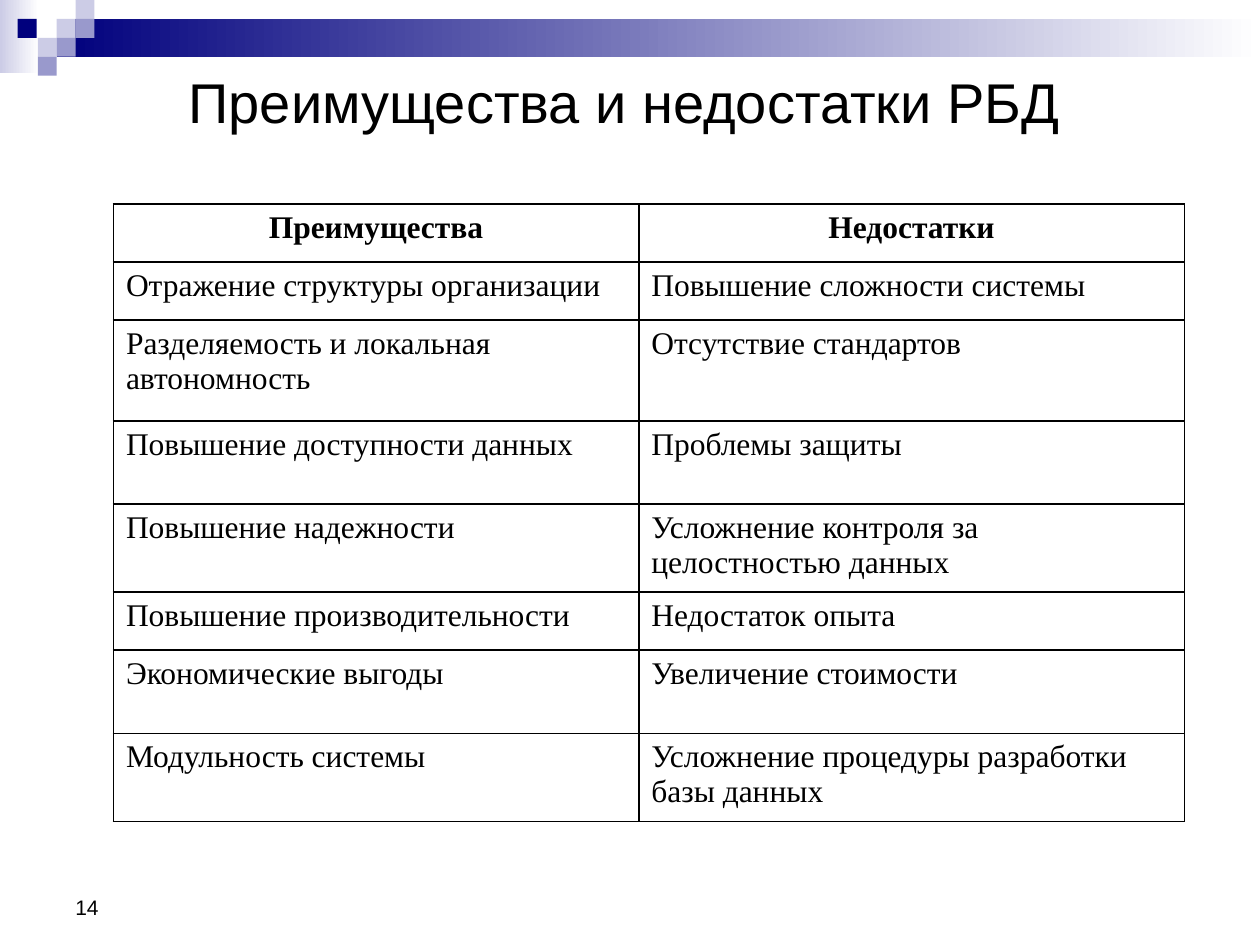
from dataclasses import dataclass

from lxml import etree
from pptx import Presentation
from pptx.dml.color import RGBColor
from pptx.enum import shapes, text
from pptx.oxml import ns
from pptx.util import Inches, Pt


@dataclass(frozen=True)
class Theme:
    navy: str = "00007D"
    mid: str = "9999CC"
    pale: str = "CCCCE6"
    white: str = "FFFFFF"
    ink: str = "000000"
    sans: str = "Arial"
    serif: str = "Times New Roman"
    head: int = 32
    body: int = 18
    foot: int = 12


@dataclass(frozen=True)
class Box:
    x: float
    y: float
    w: float
    h: float

    def place(self) -> tuple:
        return tuple(Inches(v) for v in (self.x, self.y, self.w, self.h))


@dataclass(frozen=True)
class Row:
    height: float
    pro: str
    con: str


LOOK = Theme()
SIDE = 0.15
TILES = [
    (0.45, 0.15, LOOK.pale),
    (0.6, 0, LOOK.pale),
    (0.6, 0.15, LOOK.mid),
    (0.3, 0.3, LOOK.pale),
    (0.14, 0.15, LOOK.navy),
    (0.45, 0.3, LOOK.mid),
    (0.3, 0.45, LOOK.mid),
]
COLS = (4.17, 4.33)
ROWS = [
    Row(0.46, "Преимущества", "Недостатки"),
    Row(0.46, "Отражение структуры организации", "Повышение сложности системы"),
    Row(0.8, "Разделяемость и локальная автономность", "Отсутствие стандартов"),
    Row(0.66, "Повышение доступности данных", "Проблемы защиты"),
    Row(0.7, "Повышение надежности", "Усложнение контроля за целостностью данных"),
    Row(0.46, "Повышение производительности", "Недостаток опыта"),
    Row(0.66, "Экономические выгоды", "Увеличение стоимости"),
    Row(0.7, "Модульность системы", "Усложнение процедуры разработки базы данных"),
]


def add_rect(slide, box: Box, start: str, end: str = "") -> None:
    """Draw a plain rectangle, or a left-to-right gradient if end is given."""
    rect = slide.shapes.add_shape(shapes.MSO_SHAPE.RECTANGLE, *box.place())
    rect.shadow.inherit = False
    rect.line.fill.background()
    if not end:
        rect.fill.solid()
        rect.fill.fore_color.rgb = RGBColor.from_string(start)
        return
    rect.fill.gradient()
    rect.fill.gradient_angle = 0
    for stop, color in zip(rect.fill.gradient_stops, (start, end)):
        stop.color.rgb = RGBColor.from_string(color)


def write(frame, words: str, size: int, face: str,
          center: bool = False, bold: bool = False) -> None:
    par = frame.paragraphs[0]
    par.alignment = text.PP_ALIGN.CENTER if center else text.PP_ALIGN.LEFT
    run = par.add_run()
    run.text = words
    run.font.size = Pt(size)
    run.font.name = face
    run.font.bold = bold
    run.font.color.rgb = RGBColor.from_string(LOOK.ink)


def add_label(slide, box: Box, words: str, size: int,
              anchor: text.MSO_ANCHOR, center: bool = False) -> None:
    frame = slide.shapes.add_textbox(*box.place()).text_frame
    frame.word_wrap = True
    frame.vertical_anchor = anchor
    write(frame, words, size, LOOK.sans, center)


def add_edges(cell) -> None:
    """Put a thin line on all four sides of a cell."""
    props = cell._tc.get_or_add_tcPr()
    for spot, side in enumerate(("a:lnL", "a:lnR", "a:lnT", "a:lnB")):
        line = etree.Element(ns.qn(side), w=str(Pt(1)))
        fill = etree.SubElement(line, ns.qn("a:solidFill"))
        etree.SubElement(fill, ns.qn("a:srgbClr"), val=LOOK.ink)
        props.insert(spot, line)


def add_grid(slide, x: float, y: float) -> None:
    box = Box(x, y, sum(COLS), sum(row.height for row in ROWS))
    grid = slide.shapes.add_table(len(ROWS), len(COLS), *box.place()).table
    grid.first_row = grid.horz_banding = False
    for col, width in zip(grid.columns, COLS):
        col.width = Inches(width)
    for r, row in enumerate(ROWS):
        grid.rows[r].height = Inches(row.height)
        for c, words in enumerate((row.pro, row.con)):
            cell = grid.cell(r, c)
            cell.fill.background()
            add_edges(cell)
            write(cell.text_frame, words, LOOK.body, LOOK.serif, r == 0, r == 0)


def main() -> None:
    deck = Presentation()
    deck.slide_width, deck.slide_height = Inches(10), Inches(7.5)
    slide = deck.slides.add_slide(deck.slide_layouts[6])
    add_rect(slide, Box(0, 0, 0.31, 0.58), LOOK.pale, LOOK.white)
    add_rect(slide, Box(0.45, 0.15, 9.55, 0.3), LOOK.navy, LOOK.white)
    for x, y, color in TILES:
        add_rect(slide, Box(x, y, SIDE, SIDE), color)
    add_label(slide, Box(0.5, 6.83, 2.33, 0.52), "14", LOOK.foot,
              text.MSO_ANCHOR.BOTTOM)
    add_label(slide, Box(0.5, 0.45, 8.91, 0.7), "Преимущества и недостатки РБД",
              LOOK.head, text.MSO_ANCHOR.MIDDLE, center=True)
    add_grid(slide, 0.9, 1.62)
    deck.save("out.pptx")


if __name__ == "__main__":
    main()
